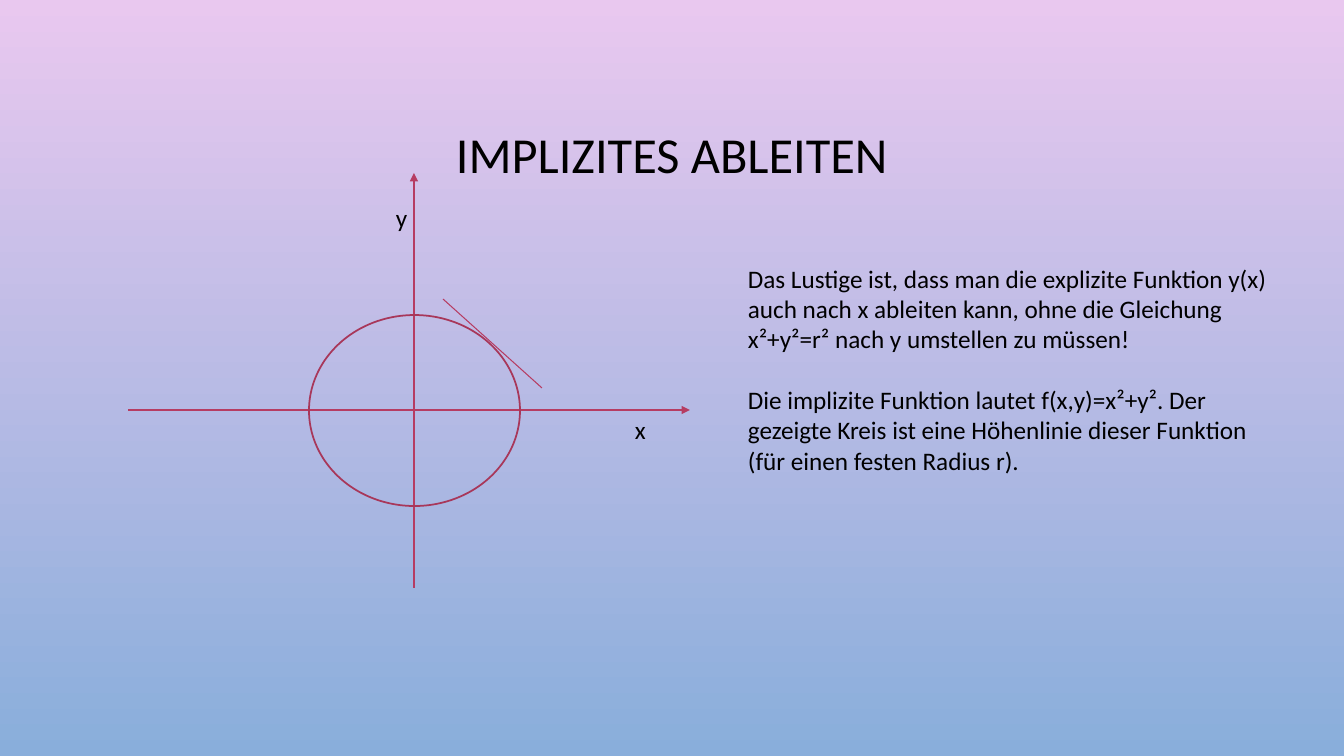
from lxml import etree
from pptx import Presentation
from pptx.dml.color import RGBColor
from pptx.enum.shapes import MSO_CONNECTOR, MSO_SHAPE
from pptx.enum.text import MSO_ANCHOR, MSO_AUTO_SIZE, PP_ALIGN
from pptx.oxml.ns import qn
from pptx.util import Pt

STRAIGHT, OVAL = MSO_CONNECTOR.STRAIGHT, MSO_SHAPE.OVAL
MIDDLE, CENTER = MSO_ANCHOR.MIDDLE, PP_ALIGN.CENTER
NO_FIT, GROW = MSO_AUTO_SIZE.NONE, MSO_AUTO_SIZE.SHAPE_TO_FIT_TEXT
PX = 914400 / 100.8


def px(*lengths):
    return [round(n * PX) for n in lengths]


def rgb(code):
    return RGBColor.from_string(code)


prs = Presentation()
prs.slide_width, prs.slide_height = px(1344, 756)
s = prs.slides.add_slide(prs.slide_layouts[5])

# Background, running from top to bottom
fill = s.background.fill
fill.gradient()
fill.gradient_angle = 270
for stop, code in zip(fill.gradient_stops, ("E9C8EF", "89AEDB")):
    stop.color.rgb = rgb(code)

# Title
title = s.shapes.title
title.left, title.top, title.width, title.height = px(101, 69, 1142, 176)
tf = title.text_frame
tf.text = "IMPLIZITES ABLEITEN"
for name, value in {"vertical_anchor": MIDDLE, "word_wrap": True, "auto_size": NO_FIT}.items():
    setattr(tf, name, value)
p = tf.paragraphs[0]
p.alignment, p.line_spacing = CENTER, 0.9
for name, value in {"name": "Calibri", "size": Pt(36)}.items():
    setattr(p.runs[0].font, name, value)
p.runs[0].font.color.rgb = rgb("000000")

# Axes and tangent: start, end, arrowhead
lines = [
    ((414, 588), (414, 173), True),
    ((128, 410), (690, 410), True),
    ((443, 299), (542, 388), False),
]
for start, end, arrow in lines:
    line = s.shapes.add_connector(STRAIGHT, *px(*start, *end))
    line.line.color.rgb = rgb("B63C62")
    line.line.width = Pt(0.75)
    if arrow:
        etree.SubElement(line.line._get_or_add_ln(), qn("a:tailEnd"), type="triangle")
    etree.SubElement(line._element.spPr, qn("a:effectLst"))

# Circle
circle = s.shapes.add_shape(OVAL, *px(309, 315, 211, 191))
circle.shadow.inherit = False
circle.fill.background()
circle.line.color.rgb = rgb("A8375A")
circle.line.width = Pt(1.25)

# Axis labels and explanation
texts = [
    ((625, 409, 56, 40), ["x"]),
    ((386, 197, 56, 40), ["y"]),
    ((738, 258, 540, 224), [
        "Das Lustige ist, dass man die explizite Funktion y(x) auch nach x ableiten kann, "
        "ohne die Gleichung x²+y²=r² nach y umstellen zu müssen!",
        "Die implizite Funktion lautet f(x,y)=x²+y². Der gezeigte Kreis ist eine Höhenlinie "
        "dieser Funktion (für einen festen Radius r).",
    ]),
]
for box, paragraphs in texts:
    tf = s.shapes.add_textbox(*px(*box)).text_frame
    tf.word_wrap, tf.auto_size = True, GROW
    for i, text in enumerate(paragraphs):
        p = tf.add_paragraph() if i else tf.paragraphs[0]
        if i:
            p.space_before = Pt(22)
        r = p.add_run()
        r.text = text
        for name, value in {"name": "Calibri", "size": Pt(18)}.items():
            setattr(r.font, name, value)
        r.font.color.rgb = rgb("000000")

prs.save("out.pptx")
